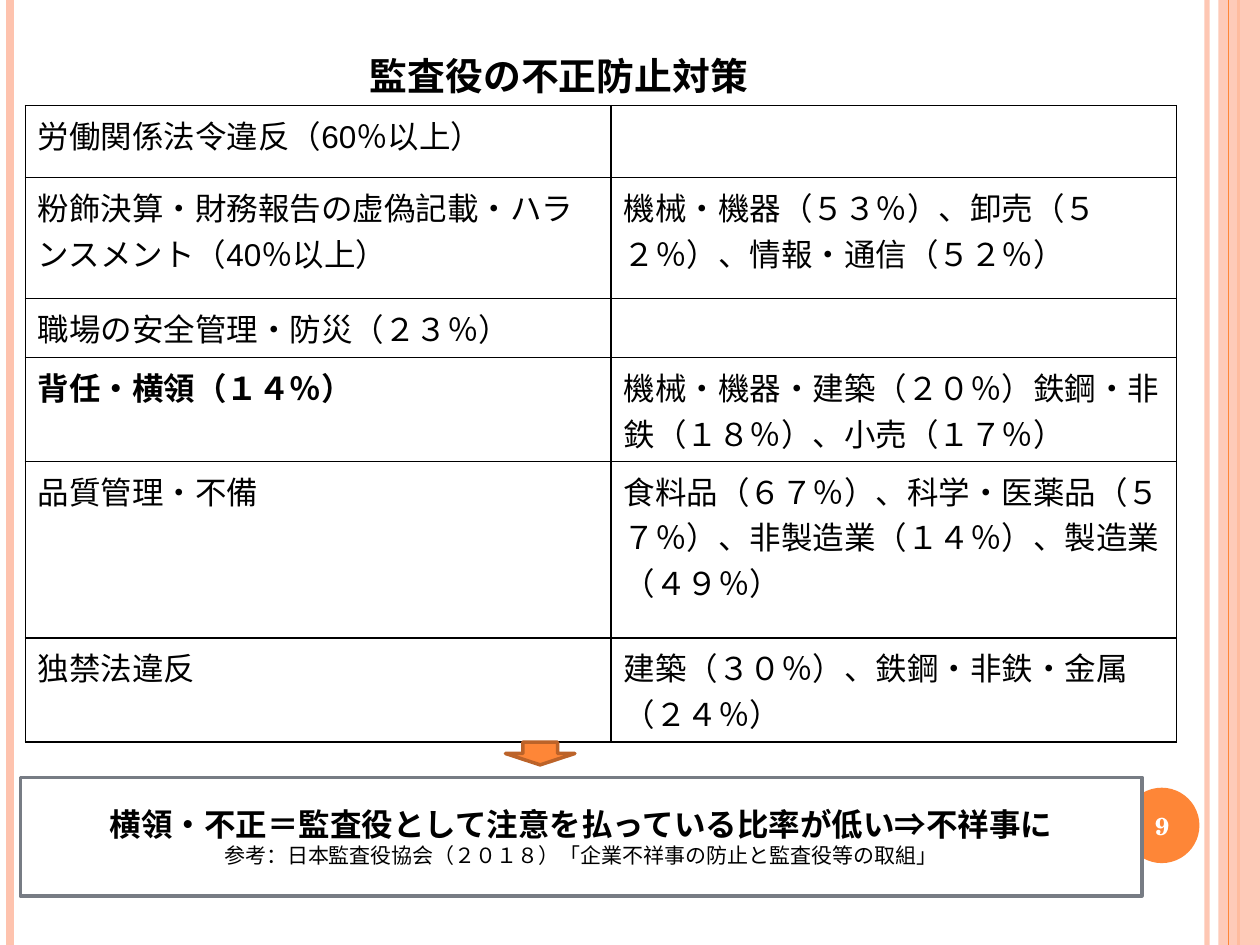
import pptx
import pptx.util
import pptx.dml.color
import pptx.enum.shapes
import pptx.enum.text
import pptx.oxml
import pptx.oxml.ns

Cm, Pt = pptx.util.Cm, pptx.util.Pt
SHAPE = pptx.enum.shapes.MSO_SHAPE
ALIGN = pptx.enum.text.PP_ALIGN
ANCHOR = pptx.enum.text.MSO_ANCHOR
qn = pptx.oxml.ns.qn

HEX = {"ink": "000000", "paper": "FFFFFF", "peach": "FEC3AE",
       "orange": "FE8637", "rust": "BC6329", "gray": "777C84"}
SERIF, SANS = "TeX Gyre Schola", "Arial"

COLS = [11.81, 11.4]
ROWS = [
    (1.45, "労働関係法令違反（60％以上）", ""),
    (2.44, "粉飾決算・財務報告の虚偽記載・ハランスメント（40％以上）",
     "機械・機器（５３％）、卸売（５２％）、情報・通信（５２％）"),
    (1.19, "職場の安全管理・防災（２３％）", ""),
    (1.96, "背任・横領（１４％）",
     "機械・機器・建築（２０％）鉄鋼・非鉄（１８％）、小売（１７％）"),
    (3.56, "品質管理・不備",
     "食料品（６７％）、科学・医薬品（５７％）、非製造業（１４％）、製造業（４９％）"),
    (2.01, "独禁法違反", "建築（３０％）、鉄鋼・非鉄・金属（２４％）"),
]
KEY_ROW = 3


def rgb(name):
    return pptx.dml.color.RGBColor.from_string(HEX[name])


def style(para, size, face, color="ink", bold=False, align=None):
    font = para.font
    font.size, font.name, font.bold = Pt(size), face, bold
    font.color.rgb = rgb(color)
    para.alignment = align


def fade(part, share):
    """Set the opacity, in percent, of the first solid fill in a shape."""
    tint = next(part._element.spPr.iter(qn("a:srgbClr")))
    tint.append(pptx.oxml.parse_xml(
        f'<a:alpha {pptx.oxml.ns.nsdecls("a")} val="{share * 1000}"/>'))


def block(slide, kind, box, fill, edge=None):
    part = slide.shapes.add_shape(kind, *map(Cm, box))
    part.shadow.inherit = False
    part.fill.solid()
    part.fill.fore_color.rgb = rgb(fill)
    if edge:
        part.line.color.rgb = rgb(edge)
        part.line.width = Pt(2)
    else:
        part.line.fill.background()
    return part


def stripe(slide, x, top, high, color, width):
    line = slide.shapes.add_connector(
        pptx.enum.shapes.MSO_CONNECTOR.STRAIGHT,
        Cm(x), Cm(top), Cm(x), Cm(top + high))
    line.line.color.rgb = rgb(color)
    line.line.width = Pt(width)
    line._element.spPr.append(pptx.oxml.parse_xml(
        f'<a:effectLst {pptx.oxml.ns.nsdecls("a")}/>'))
    return line


def frame(slide, box):
    """Draw the stripes along both edges and the disc for the page number."""
    left, top, wide, high = box
    right = left + wide
    fade(stripe(slide, right - 1.07, top, high, "peach", 3), 93)
    stripe(slide, left + 0.2, top, high, "peach", 4.5)
    stripe(slide, right - 0.43, top, high, "orange", 1.5)
    band = block(slide, SHAPE.RECTANGLE, (right - 0.84, top, 0.84, high), "peach")
    fade(band, 87)
    stripe(slide, right - 0.63, top, high, "orange", 0.75)
    block(slide, SHAPE.OVAL, (right - 2.74, top + 15.88, 1.52, 1.52), "orange")


def heading(slide, box, text):
    title = slide.shapes.title
    title.left, title.top, title.width, title.height = map(Cm, box)
    body = title.text_frame
    body.text = text
    body.vertical_anchor = ANCHOR.BOTTOM
    body.auto_size = pptx.enum.text.MSO_AUTO_SIZE.NONE
    para = body.paragraphs[0]
    style(para, 27, SERIF, bold=True, align=ALIGN.CENTER)
    para._p.pPr.find(qn("a:defRPr")).set("cap", "small")


def border(cell):
    props = cell._tc.get_or_add_tcPr()
    for side in ("lnL", "lnR", "lnT", "lnB"):
        props.append(pptx.oxml.parse_xml(
            f'<a:{side} {pptx.oxml.ns.nsdecls("a")} w="12700"><a:solidFill>'
            f'<a:srgbClr val="{HEX["ink"]}"/></a:solidFill></a:{side}>'))


def grid(slide, box):
    table = slide.shapes.add_table(len(ROWS), len(COLS), *map(Cm, box)).table
    table.first_row = table.horz_banding = False
    for col, wide in zip(table.columns, COLS):
        col.width = Cm(wide)
    for r, (high, *texts) in enumerate(ROWS):
        table.rows[r].height = Cm(high)
        for c, text in enumerate(texts):
            cell = table.cell(r, c)
            cell.text = text
            style(cell.text_frame.paragraphs[0], 18, SANS,
                  bold=(r, c) == (KEY_ROW, 0))
            border(cell)
            cell.fill.solid()
            cell.fill.fore_color.rgb = rgb("paper")


def number(slide, box, text):
    body = slide.shapes.add_textbox(*map(Cm, box)).text_frame
    body.word_wrap = True
    body.vertical_anchor = ANCHOR.MIDDLE
    body.text = text
    style(body.paragraphs[0], 14, SERIF, "paper", True, ALIGN.CENTER)


def verdict(slide, box):
    """Place the closing statement and the arrow that leads to it."""
    left, top, wide, high = box
    body = block(slide, SHAPE.RECTANGLE, box, "paper", "gray").text_frame
    body.word_wrap = True
    body.vertical_anchor = ANCHOR.MIDDLE
    body.text = ("横領・不正＝監査役として注意を払っている比率が低い⇒不祥事に\n"
                 "参考：日本監査役協会（２０１８）「企業不祥事の防止と監査役等の取組」")
    claim, credit = body.paragraphs
    style(claim, 18, SERIF, bold=True, align=ALIGN.CENTER)
    style(credit, 12, SERIF, align=ALIGN.CENTER)
    block(slide, SHAPE.DOWN_ARROW, (left + 9.78, top - 0.71, 1.4, 0.46),
          "orange", "rust")


def main():
    deck = pptx.Presentation()
    deck.slide_width, deck.slide_height = Cm(25.4), Cm(19.05)
    slide = deck.slides.add_slide(deck.slide_layouts[5])
    frame(slide, (0, 0, 25.4, 19.05))
    heading(slide, (0.89, 0.74, 20.75, 1.4), "監査役の不正防止対策")
    grid(slide, (0.51, 2.13, sum(COLS), sum(row[0] for row in ROWS)))
    number(slide, (22.58, 15.93, 1.7, 1.45), "9")
    verdict(slide, (0.41, 15.67, 22.61, 2.39))
    deck.save("out.pptx")


if __name__ == "__main__":
    main()
